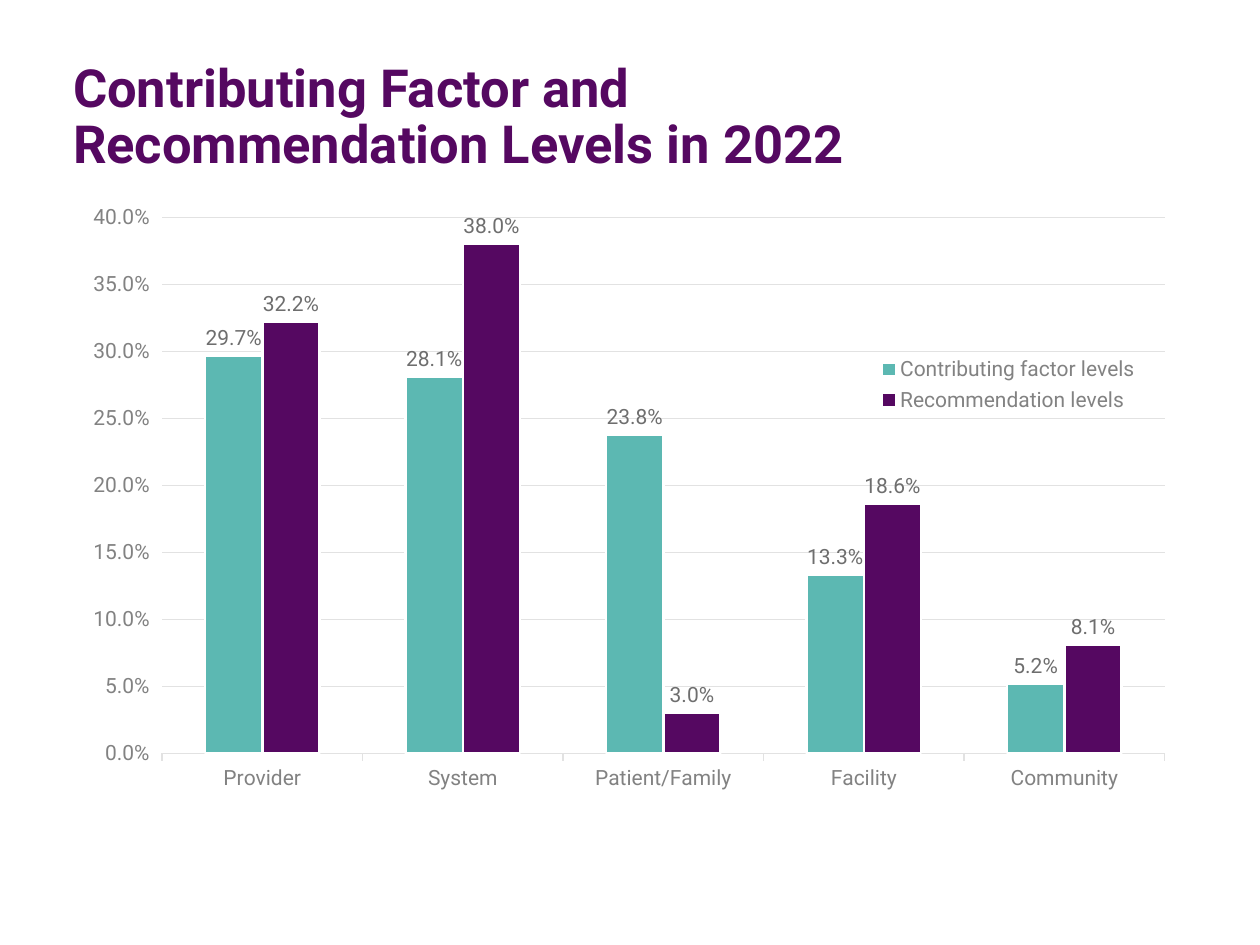
from pptx import Presentation
from pptx.chart.data import CategoryChartData
from pptx.dml.color import RGBColor
from pptx.enum.chart import (XL_CHART_TYPE, XL_LABEL_POSITION,
                             XL_LEGEND_POSITION, XL_TICK_MARK)
from pptx.enum.text import MSO_ANCHOR, MSO_AUTO_SIZE, PP_ALIGN
from pptx.oxml import parse_xml
from pptx.oxml.ns import nsdecls, qn
from pptx.util import Pt

COLUMN = XL_CHART_TYPE.COLUMN_CLUSTERED
OUT_END = XL_LABEL_POSITION.OUTSIDE_END
RIGHT = XL_LEGEND_POSITION.RIGHT
TICK_OUT = XL_TICK_MARK.OUTSIDE
MIDDLE = MSO_ANCHOR.MIDDLE
NO_FIT = MSO_AUTO_SIZE.NONE
LEFT = PP_ALIGN.LEFT

PURPLE = RGBColor(0x55, 0x08, 0x61)
TEAL = RGBColor(0x5C, 0xB8, 0xB2)
WHITE = RGBColor(0xFF, 0xFF, 0xFF)
DARK = RGBColor(0x3E, 0x3E, 0x3E)
GREY = RGBColor(0x82, 0x82, 0x82)
LABEL = RGBColor(0x6E, 0x6E, 0x6E)
RULE = RGBColor(0xE2, 0xE2, 0xE2)

FACE = "Roboto"
PERCENT = "0.0%"
CATS = ["Provider", "System", "Patient/Family", "Facility", "Community"]
SERIES = [
    ("Contributing factor levels", TEAL, [0.297, 0.281, 0.238, 0.133, 0.052]),
    ("Recommendation levels", PURPLE, [0.322, 0.38, 0.03, 0.186, 0.081]),
]


def px(num):
    """Turn pixels into EMU."""
    return round(num * 914400 / 126)


def style(font, size, color, bold=False):
    """Set face, size, colour and weight of a font."""
    font.name = FACE
    font.size = Pt(size)
    font.bold = bold
    font.color.rgb = color


def rule(line, color, width):
    """Give a line its colour and width in points."""
    line.color.rgb = color
    line.width = Pt(width)


def add_title(slide, text, box):
    """Place and format the title placeholder."""
    title = slide.shapes.title
    title.left, title.top, title.width, title.height = map(px, box)
    frame = title.text_frame
    frame.word_wrap = True
    frame.auto_size = NO_FIT
    frame.vertical_anchor = MIDDLE
    frame.margin_left = 0
    frame.margin_top = frame.margin_right = frame.margin_bottom = px(12.6)
    para = frame.paragraphs[0]
    para.alignment = LEFT
    para.line_spacing = 0.9
    run = para.add_run()
    run.text = text
    style(run.font, 30, PURPLE, True)


def set_place(node, index, box, inner=False):
    """Fix the place of a chart part as shares of the chart."""
    for old in node.findall(qn("c:layout")):
        node.remove(old)
    target = '<c:layoutTarget val="inner"/>' if inner else ""
    modes = "".join(f'<c:{key}Mode val="edge"/>' for key in "xy")
    sizes = "".join(f'<c:{key} val="{val}"/>' for key, val in zip("xywh", box))
    node.insert(index, parse_xml(
        f'<c:layout {nsdecls("c")}><c:manualLayout>{target}{modes}{sizes}'
        "</c:manualLayout></c:layout>"))


def style_axes(chart):
    """Format both axes and the grid."""
    for axis in (chart.category_axis, chart.value_axis):
        axis.major_tick_mark = TICK_OUT
        style(axis.tick_labels.font, 12, GREY)
    rule(chart.category_axis.format.line, RULE, 0.75)
    value = chart.value_axis
    value.minimum_scale, value.maximum_scale = 0, 0.4
    value.major_unit = 0.05
    value.format.line.fill.background()
    rule(value.major_gridlines.format.line, RULE, 0.75)
    value.tick_labels.number_format = PERCENT
    value.tick_labels.number_format_is_linked = False


def style_bars(plot):
    """Colour and label the bars of each series."""
    plot.gap_width = 150
    plot.overlap = 0
    plot.vary_by_categories = False
    for bars, (_, color, _) in zip(plot.series, SERIES):
        bars.format.fill.solid()
        bars.format.fill.fore_color.rgb = color
        rule(bars.format.line, WHITE, 1.5)
        labels = bars.data_labels
        labels.show_value = True
        labels.number_format = PERCENT
        labels.number_format_is_linked = False
        labels.position = OUT_END
        style(labels.font, 12, LABEL)


def add_levels(slide, box):
    """Add the column chart of levels."""
    data = CategoryChartData(number_format=PERCENT)
    data.categories = CATS
    for name, _, vals in SERIES:
        data.add_series(name, vals)
    chart = slide.shapes.add_chart(COLUMN, *map(px, box), data).chart
    chart.has_title = False
    style(chart.font, 10, DARK)
    style_axes(chart)
    style_bars(chart.plots[0])
    chart.has_legend = True
    chart.legend.position = RIGHT
    chart.legend.include_in_layout = False
    style(chart.legend.font, 12, GREY)
    root = chart.element if hasattr(chart, "element") else chart._chartSpace
    set_place(root.find(".//" + qn("c:plotArea")), 0,
              (0.08, 0.04, 0.9, 0.88), True)
    legend = root.find(".//" + qn("c:legend"))
    set_place(legend, 1, (0.72, 0.26, 0.24, 0.11))
    legend.find(qn("c:overlay")).set("val", "1")


def main():
    """Build and save the slide."""
    deck = Presentation()
    deck.slide_width, deck.slide_height = px(1260), px(945)
    slide = deck.slides.add_slide(deck.slide_layouts[5])
    add_title(slide, "Contributing Factor and Recommendation Levels in 2022",
              (73, 44, 903, 149))
    add_levels(slide, (73, 193, 1114, 609))
    deck.save("out.pptx")


if __name__ == "__main__":
    main()
